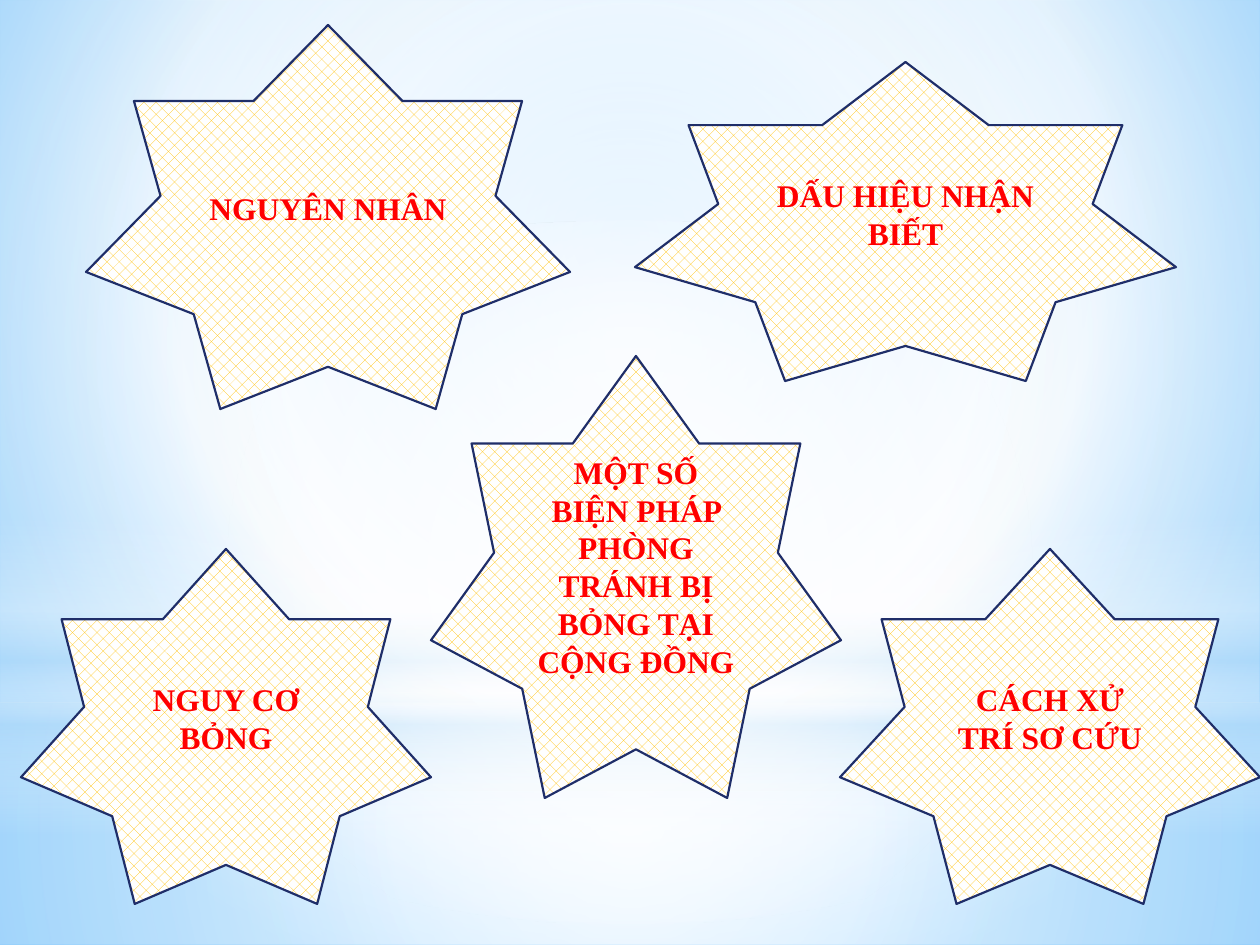
from dataclasses import dataclass
from typing import Optional

from lxml.etree import SubElement
from pptx import Presentation
from pptx.dml.color import RGBColor
from pptx.enum.dml import MSO_PATTERN
from pptx.enum.shapes import MSO_SHAPE
from pptx.enum.text import MSO_ANCHOR, PP_ALIGN
from pptx.oxml.ns import qn
from pptx.util import Emu, Inches, Pt

PX_PER_INCH = 126
WHITE = RGBColor(0xFF, 0xFF, 0xFF)
SKY = RGBColor(0x9E, 0xD5, 0xFF)
DEEP_SKY = RGBColor(0x5B, 0xB9, 0xFF)
PALE_BLUE = RGBColor(0xB4, 0xDC, 0xFA)
GOLD = RGBColor(0xFF, 0xC0, 0x00)
NAVY = RGBColor(0x1F, 0x2E, 0x69)
RED = RGBColor(0xFF, 0x00, 0x00)
FONT = "Times New Roman"


@dataclass(frozen=True)
class Box:
    left: int
    top: int
    width: int
    height: int


@dataclass(frozen=True)
class Stop:
    position: int
    color: RGBColor
    opacity: int = 100


@dataclass(frozen=True)
class Gradient:
    """Stops in percent; radial towards focus (l, t, r, b), or vertical without one."""
    stops: tuple[Stop, ...]
    focus: Optional[tuple[int, int, int, int]] = None


@dataclass(frozen=True)
class Glow:
    box: Box
    gradient: Gradient
    kind: MSO_SHAPE = MSO_SHAPE.RECTANGLE


@dataclass(frozen=True)
class Star:
    box: Box
    text: str


CENTER = (50, 50, 50, 50)
BACKGROUND = Gradient(
    (Stop(0, SKY), Stop(60, WHITE), Stop(100, DEEP_SKY)), (20, 10, 20, 60))
GLOWS = (
    Glow(Box(0, 703, 1260, 242), Gradient(
        (Stop(0, WHITE, 91), Stop(37, WHITE, 76), Stop(100, PALE_BLUE, 79)), CENTER)),
    Glow(Box(0, 0, 1260, 703), Gradient(
        (Stop(0, WHITE, 89), Stop(48, WHITE, 62), Stop(100, PALE_BLUE, 79)), CENTER)),
    Glow(Box(0, 519, 1260, 315), Gradient(
        (Stop(0, WHITE, 0), Stop(29, WHITE, 30), Stop(45, PALE_BLUE, 40),
         Stop(55, WHITE, 26), Stop(65, PALE_BLUE, 60), Stop(100, WHITE, 0)))),
    Glow(Box(0, 221, 1260, 703), Gradient(
        (Stop(0, WHITE), Stop(56, WHITE, 0)), CENTER), MSO_SHAPE.OVAL),
)
STARS = (
    Star(Box(86, 25, 484, 384), "NGUYÊN NHÂN"),
    Star(Box(635, 62, 541, 319), "DẤU HIỆU NHẬN BIẾT"),
    Star(Box(21, 549, 410, 355), "NGUY CƠ BỎNG"),
    Star(Box(840, 549, 420, 355), "CÁCH XỬ TRÍ SƠ CỨU"),
    Star(Box(431, 356, 410, 442), "MỘT SỐ BIỆN PHÁP PHÒNG TRÁNH BỊ BỎNG TẠI CỘNG ĐỒNG"),
)


def px(length: int) -> Emu:
    return Emu(round(length * Inches(1) / PX_PER_INCH))


def percent(value: int) -> str:
    return str(value * 1000)


def apply_gradient(fill, element, gradient: Gradient) -> None:
    """Turn the first fill inside element into the given gradient."""
    fill.gradient()
    grad_fill = element.find(".//" + qn("a:gradFill"))
    for child in list(grad_fill):
        grad_fill.remove(child)
    stop_list = SubElement(grad_fill, qn("a:gsLst"))
    for stop in gradient.stops:
        entry = SubElement(stop_list, qn("a:gs"), pos=percent(stop.position))
        color = SubElement(entry, qn("a:srgbClr"), val=str(stop.color))
        if stop.opacity < 100:
            SubElement(color, qn("a:alpha"), val=percent(stop.opacity))
    if gradient.focus is None:
        SubElement(grad_fill, qn("a:lin"), ang="5400000", scaled="0")
    else:
        radial = SubElement(grad_fill, qn("a:path"), {"path": "circle"})
        SubElement(radial, qn("a:fillToRect"),
                   dict(zip("ltrb", map(percent, gradient.focus))))


def add_box_shape(slide, kind: MSO_SHAPE, box: Box):
    shape = slide.shapes.add_shape(
        kind, px(box.left), px(box.top), px(box.width), px(box.height))
    shape.shadow.inherit = False
    return shape


def draw_glow(slide, glow: Glow) -> None:
    shape = add_box_shape(slide, glow.kind, glow.box)
    shape.line.fill.background()
    apply_gradient(shape.fill, shape.element, glow.gradient)


def draw_star(slide, star: Star) -> None:
    shape = add_box_shape(slide, MSO_SHAPE.STAR_7_POINT, star.box)
    shape.fill.patterned()
    shape.fill.pattern = MSO_PATTERN.PERCENT_30
    shape.fill.fore_color.rgb = GOLD
    shape.fill.back_color.rgb = WHITE
    shape.line.color.rgb = NAVY
    shape.line.width = Pt(1.25)

    text_frame = shape.text_frame
    text_frame.text = star.text
    text_frame.word_wrap = True
    text_frame.vertical_anchor = MSO_ANCHOR.MIDDLE
    paragraph = text_frame.paragraphs[0]
    paragraph.alignment = PP_ALIGN.CENTER
    font = paragraph.runs[0].font
    font.name = FONT
    font.size = Pt(18)
    font.bold = True
    font.color.rgb = RED


def main() -> None:
    presentation = Presentation()
    presentation.slide_width = px(1260)
    presentation.slide_height = px(945)
    slide = presentation.slides.add_slide(presentation.slide_layouts[6])
    apply_gradient(slide.background.fill, slide.element, BACKGROUND)
    for glow in GLOWS:
        draw_glow(slide, glow)
    for star in STARS:
        draw_star(slide, star)
    presentation.save("out.pptx")


if __name__ == "__main__":
    main()
